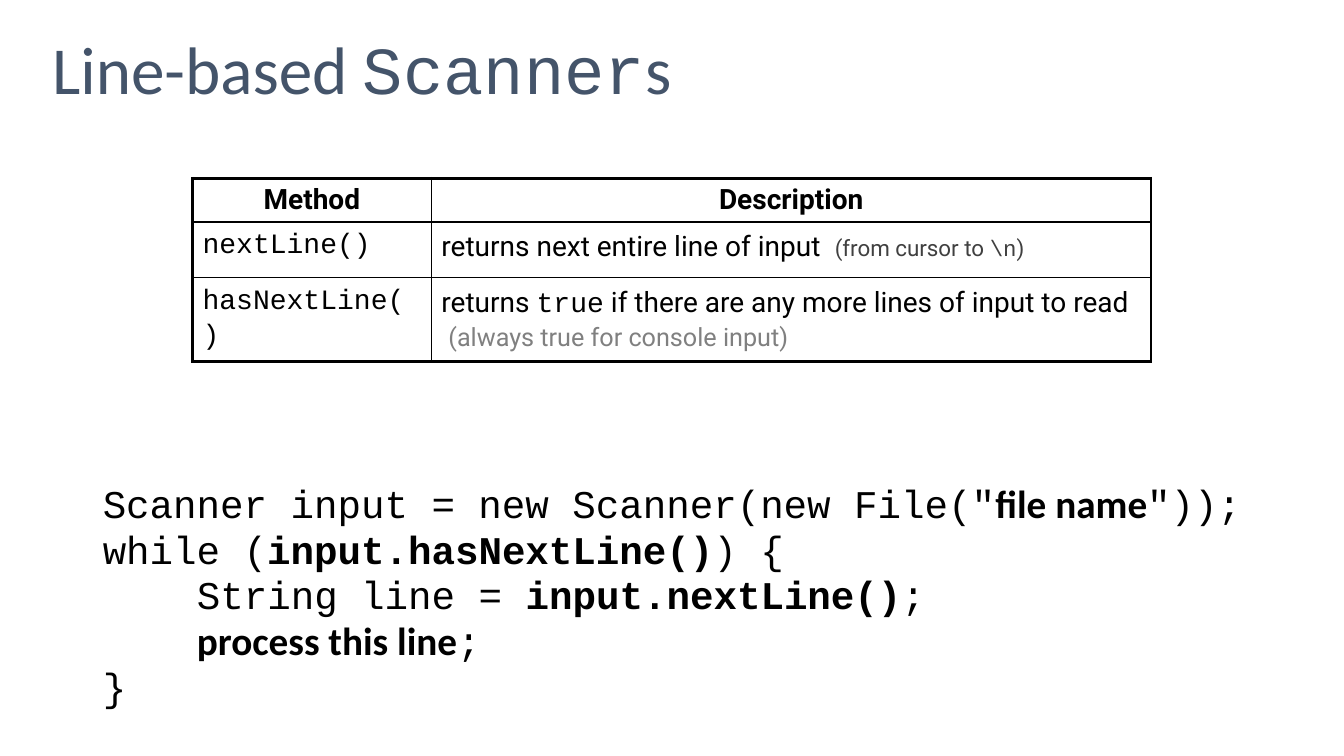
"""Build a slide on line-based scanners: a method table above a code sample."""
from lxml.etree import SubElement
from pptx import Presentation
from pptx.dml.color import RGBColor
from pptx.enum.text import MSO_ANCHOR, PP_ALIGN
from pptx.oxml.ns import qn
from pptx.util import Pt

COLORS = {"title": "44546A", "black": "000000", "note": "404040", "faint": "808080"}
SANS, MONO, BODY = "Calibri", "Courier New", "Roboto"


def add_run(p, text, font=MONO, size=28, color="black", bold=False):
    r = p.add_run()
    r.text = text
    r.font.name = font
    r.font.size = Pt(size)
    r.font.bold = bold
    r.font.color.rgb = RGBColor.from_string(COLORS[color])


def add_border(cell, side, width):
    ln = SubElement(cell._tc.get_or_add_tcPr(), qn(f"a:ln{side}"), w=str(Pt(width)))
    fill = SubElement(ln, qn("a:solidFill"))
    SubElement(fill, qn("a:srgbClr"), val=COLORS["black"])


prs = Presentation()
prs.slide_width, prs.slide_height = Pt(960), Pt(540)
s = prs.slides.add_slide(prs.slide_layouts[6])

tf = s.shapes.add_textbox(Pt(30.24), Pt(0), Pt(900), Pt(104.4)).text_frame
tf.word_wrap = True
tf.vertical_anchor = MSO_ANCHOR.MIDDLE
p = tf.paragraphs[0]
p.line_spacing = 0.9
for text, font in [("Line-based ", SANS), ("Scanner", MONO), ("s", SANS)]:
    add_run(p, text, font=font, size=48, color="title")

head = dict(font=BODY, size=20, bold=True)
desc = dict(font=BODY, size=20)
code = dict(size=20)
note = dict(font=BODY, size=16, color="note")
rows = [
    [[[("Method", head)]], [[("Description", head)]]],
    [[[("nextLine()", code)]],
     [[("returns next entire line of input  ", desc), ("(from cursor to ", note),
       ("\\n", dict(note, font=MONO)), (")", note)]]],
    [[[("hasNextLine()", code)]],
     [[("returns ", desc), ("true", code),
       (" if there are any more lines of input to read", desc)],
      [("(always true for console input)", dict(font=BODY, size=18, color="faint"))]]],
]
widths, heights = [170.64, 514.08], [31, 39.8, 59.8]
table = s.shapes.add_table(3, 2, Pt(137.5), Pt(127.4), Pt(sum(widths)), Pt(sum(heights))).table
table.first_row = table.horz_banding = False
for col, width in zip(table.columns, widths):
    col.width = Pt(width)
for i, row in enumerate(rows):
    table.rows[i].height = Pt(heights[i])
    for j, paragraphs in enumerate(row):
        cell = table.cell(i, j)
        outer = {"L": j == 0, "R": j == 1, "T": i == 0, "B": i == 2}
        for side, thick in outer.items():
            add_border(cell, side, 2.25 if thick else 1)
        cell.fill.background()
        tf = cell.text_frame
        for k, runs in enumerate(paragraphs):
            p = tf.add_paragraph() if k else tf.paragraphs[0]
            p.alignment = PP_ALIGN.LEFT if i else PP_ALIGN.CENTER
            p.line_spacing = 1.1 if i else 1.0
            if k:
                p._p.get_or_add_pPr().set("marL", str(Pt(5)))
            for text, fmt in runs:
                add_run(p, text, **fmt)

bold = dict(bold=True)
blank = dict(font=SANS, bold=True)
lines = [
    (0, [('Scanner input = new Scanner(new File("', {}), ("file name", blank), ('"));', {})]),
    (0, [("while (", {}), ("input.hasNextLine()", bold), (") {", {})]),
    (1, [("String line = ", {}), ("input.nextLine()", bold), (";", {})]),
    (1, [("process this line", blank), (";", {})]),
    (0, [("}", {})]),
]
tf = s.shapes.add_textbox(Pt(73.44), Pt(343.8), Pt(850), Pt(164)).text_frame
tf.word_wrap = True
tf.margin_left = tf.margin_top = tf.margin_right = tf.margin_bottom = 0
for n, (depth, runs) in enumerate(lines):
    p = tf.add_paragraph() if n else tf.paragraphs[0]
    p.line_spacing = Pt(32.5)
    p._p.get_or_add_pPr().set("marL", str(Pt(67.2 * depth)))
    for text, fmt in runs:
        add_run(p, text, **fmt)

prs.save("out.pptx")
